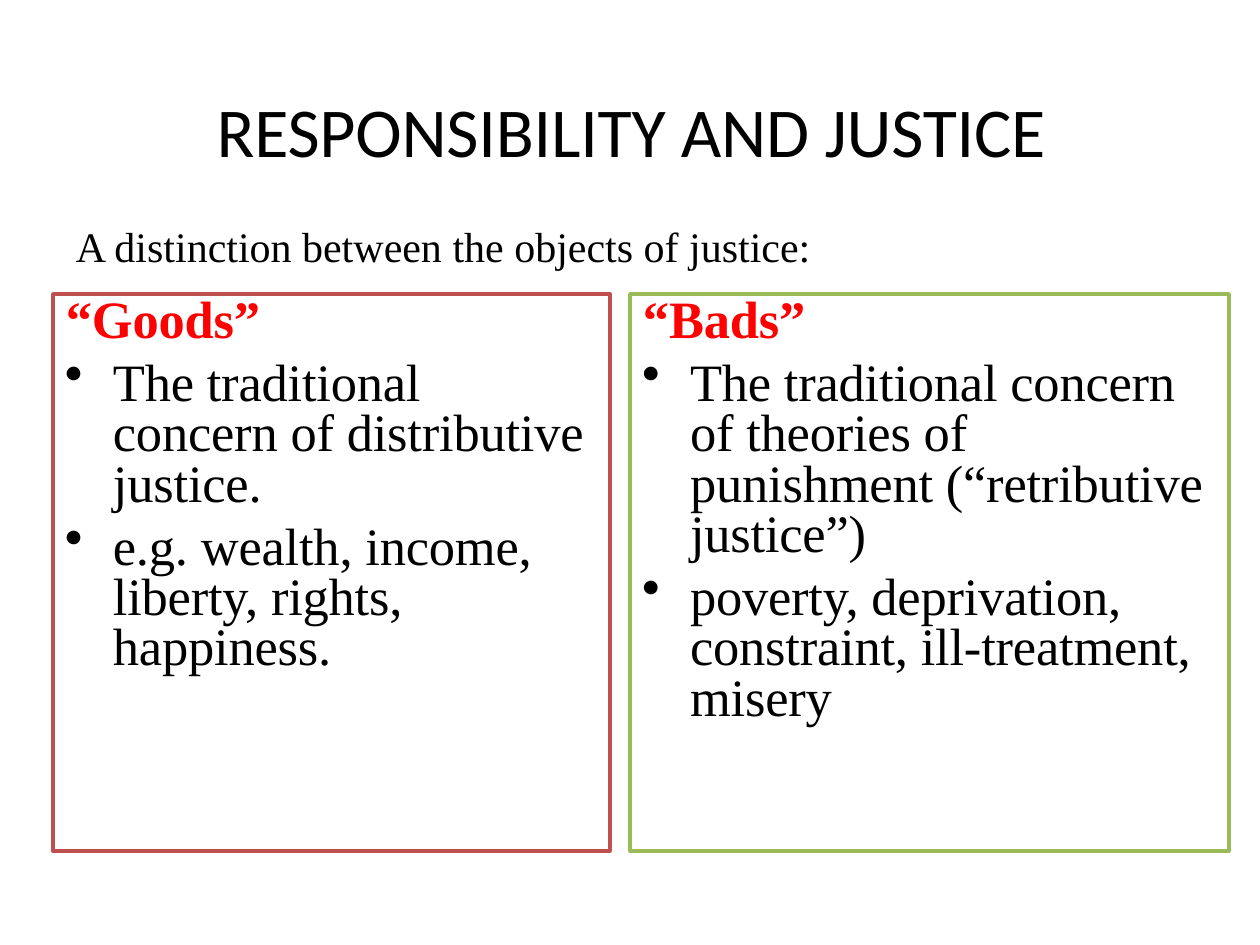
import pptx
import pptx.util
import pptx.dml.color
import pptx.enum.shapes
import pptx.enum.text
import pptx.oxml.ns
import lxml.etree

SCALE = 914400 / 126
HUES = {"ink": "000000", "paper": "FFFFFF", "head": "FF0000",
        "goods": "C0504D", "bads": "9BBA58"}
SERIF = "Times New Roman"
ALIGN = pptx.enum.text.PP_ALIGN


def px(size):
    return pptx.util.Emu(round(size * SCALE))


def hue(name):
    return pptx.dml.color.RGBColor.from_string(HUES[name])


def write(para, text, size=30, font=SERIF, color="ink", bold=False, track=-10,
          align=ALIGN.LEFT, pitch=None, before=0, left=0, hang=0, bullet=None):
    para.alignment = align
    para.space_before = pptx.util.Pt(before)
    if pitch:
        para.line_spacing = pptx.util.Pt(pitch)
    props = para._p.get_or_add_pPr()
    props.set("marL", str(px(left)))
    props.set("indent", str(px(-hang)))
    if bullet:
        mark = lxml.etree.SubElement(props, pptx.oxml.ns.qn("a:buChar"))
        mark.set("char", bullet)
    run = para.add_run()
    run.text = text
    run.font.size = pptx.util.Pt(size)
    run.font.name = font
    run.font.bold = bold
    run.font.color.rgb = hue(color)
    run._r.get_or_add_rPr().set("spc", str(track))


class Deck:
    """Hold the style and the current slide, and draw each kind of element."""

    def __init__(self):
        self.prs = pptx.Presentation()
        self.prs.slide_width = px(1260)
        self.prs.slide_height = px(945)
        self.slide = self.prs.slides.add_slide(self.prs.slide_layouts[6])

    def frame(self, shape, anchor):
        frame = shape.text_frame
        frame.word_wrap = True
        frame.vertical_anchor = anchor
        frame.margin_left = frame.margin_right = 0
        frame.margin_top = frame.margin_bottom = 0
        return frame

    def label(self, box, text, anchor=pptx.enum.text.MSO_ANCHOR.TOP, **style):
        shape = self.slide.shapes.add_textbox(*map(px, box))
        write(self.frame(shape, anchor).paragraphs[0], text, **style)

    def panel(self, box, edge, head, items):
        shape = self.slide.shapes.add_shape(
            pptx.enum.shapes.MSO_SHAPE.RECTANGLE, *map(px, box))
        shape.shadow.inherit = False
        shape.fill.solid()
        shape.fill.fore_color.rgb = hue("paper")
        shape.line.color.rgb = hue(edge)
        shape.line.width = pptx.util.Pt(2.04)
        frame = self.frame(shape, pptx.enum.text.MSO_ANCHOR.TOP)
        write(frame.paragraphs[0], head, color="head", bold=True,
              pitch=31.3, left=13)
        for item in items:
            write(frame.add_paragraph(), item, pitch=28.8, before=7.2,
                  left=60, hang=48, bullet="•")


def main():
    deck = Deck()
    deck.label((105, 86, 1052, 87), "RESPONSIBILITY AND JUSTICE",
               anchor=pptx.enum.text.MSO_ANCHOR.MIDDLE, size=40,
               font="Calibri", align=ALIGN.CENTER, before=0.9)
    deck.panel((53, 294, 557, 557), "goods", "“Goods”", [
        "The traditional  concern of distributive  justice.",
        "e.g. wealth, income,  liberty, rights,  happiness."])
    deck.panel((630, 294, 599, 557), "bads", "“Bads”", [
        "The traditional concern  of theories of  punishment"
        " (“retributive  justice”)",
        "poverty, deprivation,  constraint, ill-treatment,  misery"])
    deck.label((74, 220, 737, 54),
               "A distinction between the objects of justice:",
               size=24, track=0, left=2, before=1)
    deck.prs.save("out.pptx")


if __name__ == "__main__":
    main()
